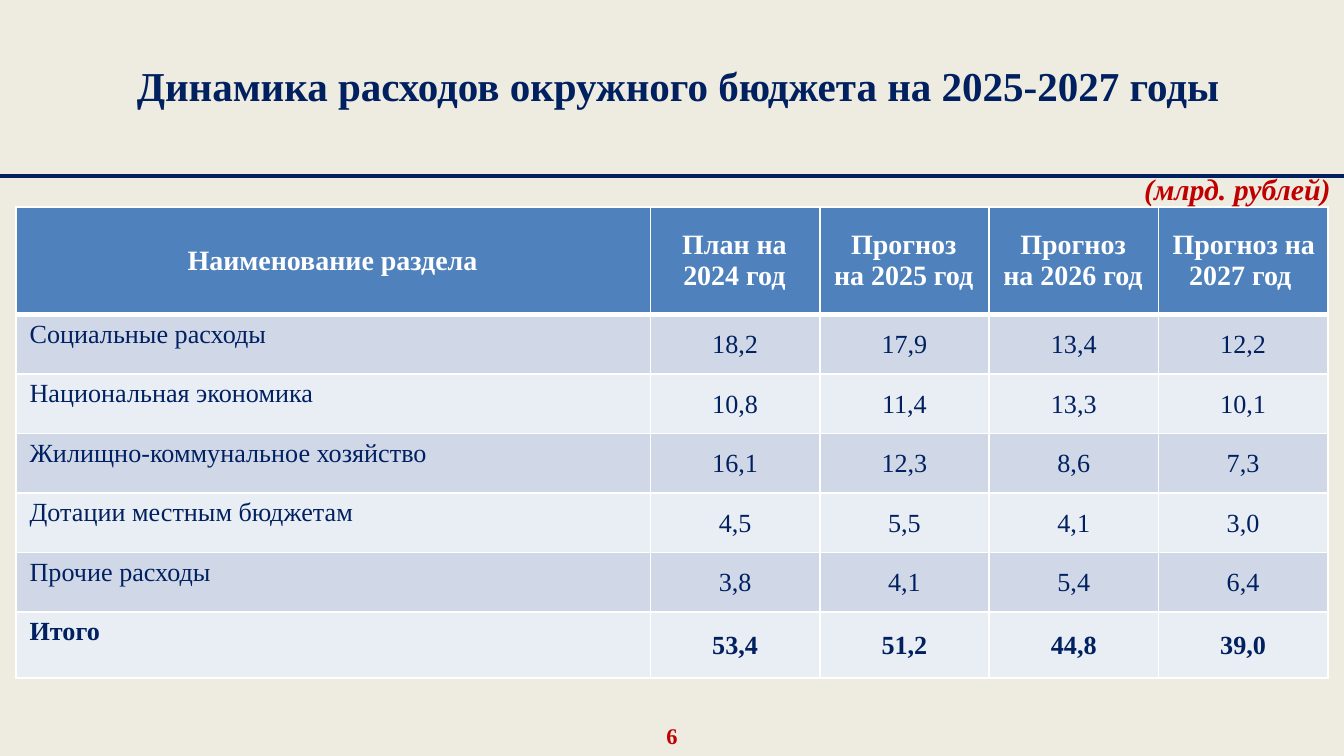
from lxml.etree import SubElement
from pptx import Presentation
from pptx.dml.color import RGBColor
from pptx.enum.shapes import MSO_CONNECTOR
from pptx.enum.text import MSO_ANCHOR, MSO_AUTO_SIZE, PP_ALIGN
from pptx.oxml.ns import qn
from pptx.util import Inches, Pt

CREAM = RGBColor(0xEE, 0xEC, 0xE1)
NAVY = RGBColor(0x00, 0x20, 0x60)
RED = RGBColor(0xC0, 0x00, 0x00)
WHITE = RGBColor(0xFF, 0xFF, 0xFF)
BLUE = RGBColor(0x4F, 0x81, 0xBD)
BANDS = RGBColor(0xD0, 0xD8, 0xE8), RGBColor(0xE9, 0xED, 0xF4)
FONT = "Times New Roman"

# The grid has 100 columns and 56.25 rows, each a tenth of an inch.
COLS, ROWS = 100, 56.25

HEAD = ["Наименование раздела", "План на 2024 год", "Прогноз на 2025 год",
        "Прогноз на 2026 год", "Прогноз на 2027 год "]
BODY = [
    ["Социальные расходы", "18,2", "17,9", "13,4", "12,2"],
    ["Национальная экономика", "10,8", "11,4", "13,3", "10,1"],
    ["Жилищно-коммунальное хозяйство", "16,1", "12,3", "8,6", "7,3"],
    ["Дотации местным бюджетам", "4,5", "5,5", "4,1", "3,0"],
    ["Прочие расходы", "3,8", "4,1", "5,4", "6,4"],
    ["Итого", "53,4", "51,2", "44,8", "39,0"],
]


def grid(*units):
    return [Inches(unit / 10) for unit in units]


class Deck:
    def __init__(self):
        self.file = Presentation()
        self.file.slide_width, self.file.slide_height = grid(COLS, ROWS)
        self.slide = self.file.slides.add_slide(self.file.slide_layouts[5])
        fill = self.slide.background.fill
        fill.solid()
        fill.fore_color.rgb = CREAM

    def style(self, frame, text, size, color, bold=True, italic=False,
              align=PP_ALIGN.CENTER):
        """Set the text of a frame and format its runs."""
        frame.text = text
        frame.word_wrap = True
        for para in frame.paragraphs:
            para.alignment = align
            for run in para.runs:
                font = run.font
                font.name, font.size = FONT, Pt(size)
                font.bold, font.italic = bold, italic
                font.color.rgb = color

    def title(self, text, left, top, width, height):
        shape = self.slide.shapes.title
        shape.left, shape.top, shape.width, shape.height = grid(
            left, top, width, height)
        frame = shape.text_frame
        self.style(frame, text, 22, NAVY)
        frame.auto_size = MSO_AUTO_SIZE.NONE
        frame.vertical_anchor = MSO_ANCHOR.MIDDLE
        frame.paragraphs[0].line_spacing = 0.91

    def label(self, text, left, top, width, height, size, **look):
        shape = self.slide.shapes.add_textbox(*grid(left, top, width, height))
        self.style(shape.text_frame, text, size, RED, **look)
        shape.text_frame.vertical_anchor = MSO_ANCHOR.MIDDLE

    def rule(self, top):
        line = self.slide.shapes.add_connector(
            MSO_CONNECTOR.STRAIGHT, *grid(0, top, COLS, top))
        line.line.color.rgb = NAVY
        line.line.width = Pt(2)
        SubElement(line._element.spPr, qn("a:effectLst"))

    def table(self, left, top, widths, heights):
        shape = self.slide.shapes.add_table(
            len(heights), len(widths),
            *grid(left, top, sum(widths), sum(heights)))
        table = shape.table
        for col, width in zip(table.columns, grid(*widths)):
            col.width = width
        for row, height in zip(table.rows, grid(*heights)):
            row.height = height
        for y, texts in enumerate([HEAD] + BODY):
            for x, text in enumerate(texts):
                self.cell(table.cell(y, x), text, x, y)

    def cell(self, cell, text, x, y):
        top, name = y == 0, x == 0
        cell.fill.solid()
        cell.fill.fore_color.rgb = BLUE if top else BANDS[(y - 1) % 2]
        self.style(cell.text_frame, text, 15 if top else 14,
                   WHITE if top else NAVY, bold=top or y == len(BODY),
                   align=PP_ALIGN.LEFT if name and not top
                   else PP_ALIGN.CENTER)
        cell.vertical_anchor = (MSO_ANCHOR.TOP if name and not top
                                else MSO_ANCHOR.MIDDLE)
        if top or name:
            # The last heading needs a little more room for its first line.
            right = 0.9 if x == len(HEAD) - 1 else 1.1
            sides = grid(1, 0.4, right, 0.4)
        else:
            sides = grid(0.1, 0.1, 0.1, 0)
        (cell.margin_left, cell.margin_top,
         cell.margin_right, cell.margin_bottom) = sides
        self.edges(cell, {"L": 1, "R": 1, "T": 3 if y == 1 else 1,
                          "B": 3 if top else 1})

    def edges(self, cell, widths):
        """Draw white borders; they must come before the cell's fill."""
        props = cell._tc.get_or_add_tcPr()
        for spot, (side, width) in enumerate(widths.items()):
            line = SubElement(props, qn(f"a:ln{side}"), w=str(Pt(width)))
            fill = SubElement(line, qn("a:solidFill"))
            SubElement(fill, qn("a:srgbClr"), val=str(WHITE))
            props.insert(spot, line)


def main():
    deck = Deck()
    deck.label("6", 0, 53.3, COLS, 2.9, 12)
    deck.title("Динамика расходов окружного бюджета на 2025-2027 годы",
               2, 0, 96.9, 13.1)
    deck.rule(13.1)
    deck.table(1.2, 15.4, [47.2] + [12.6] * 4, [8] + [4.43] * 5 + [4.9])
    deck.label("(млрд. рублей)", 82.3, 12.2, 17.7, 3.7, 16,
               italic=True, align=PP_ALIGN.RIGHT)
    deck.file.save("out.pptx")


if __name__ == "__main__":
    main()
